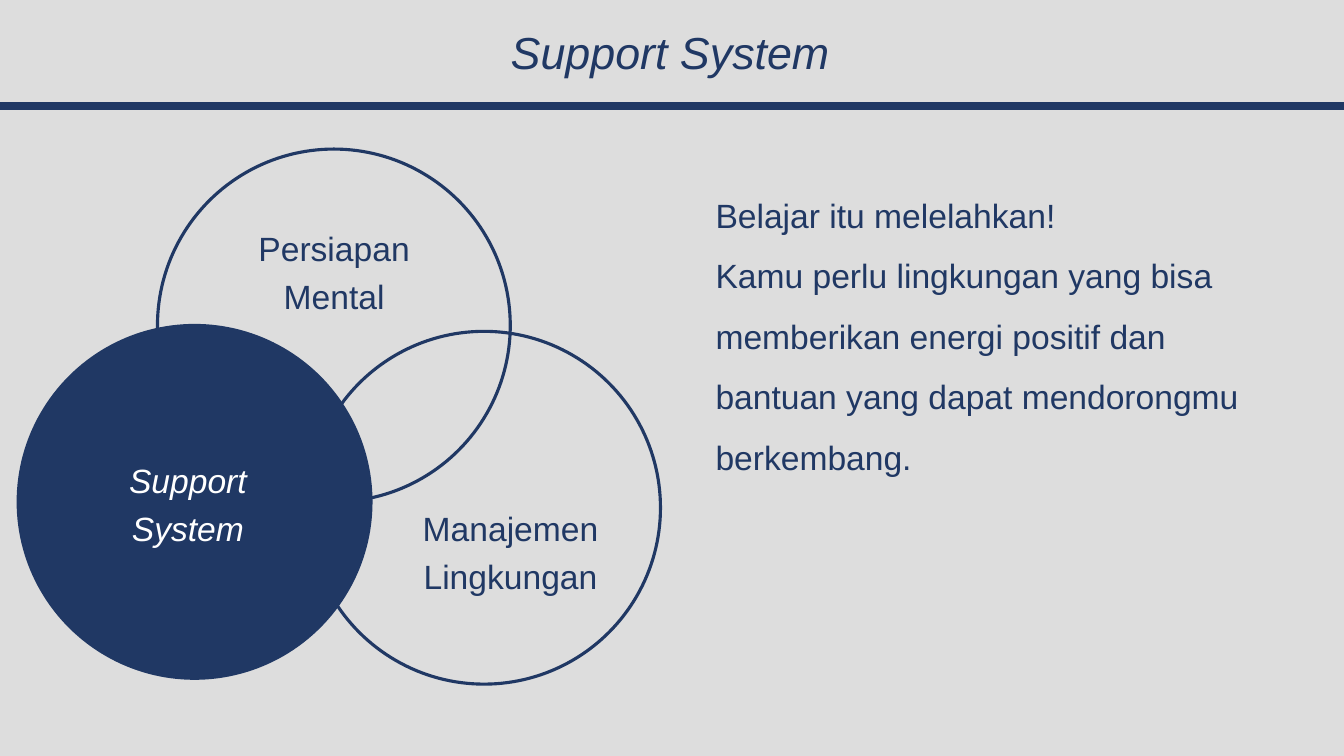
"""Build the Support System slide with three overlapping circles."""
from lxml import etree
from pptx import Presentation
from pptx import util as u
from pptx.dml.color import RGBColor
from pptx.enum import shapes, text
from pptx.oxml.ns import qn

NAVY = RGBColor(0x20, 0x38, 0x64)
WHITE = RGBColor(0xFF, 0xFF, 0xFF)
GREY = RGBColor(0xDD, 0xDD, 0xDD)


class Deck:
    font = "Arial"

    def __init__(self, wide, high):
        self.prs = Presentation()
        self.prs.slide_width, self.prs.slide_height = u.Pt(wide), u.Pt(high)
        self.slide = self.prs.slides.add_slide(self.prs.slide_layouts[1])
        fill = self.slide.background.fill
        fill.solid()
        fill.fore_color.rgb = GREY

    def rule(self, y, end, width):
        line = self.slide.shapes.add_connector(
            shapes.MSO_CONNECTOR.STRAIGHT, 0, u.Pt(y), u.Pt(end), u.Pt(y))
        line.line.color.rgb = NAVY
        line.line.width = u.Pt(width)
        etree.SubElement(line._element.spPr, qn("a:effectLst"))

    def ring(self, x, y, size, full=False):
        ring = self.slide.shapes.add_shape(
            shapes.MSO_SHAPE.OVAL, u.Pt(x), u.Pt(y), u.Pt(size), u.Pt(size))
        ring.shadow.inherit = False
        ring.line.color.rgb = NAVY
        ring.line.width = u.Pt(2.25)
        if full:
            ring.fill.solid()
            ring.fill.fore_color.rgb = NAVY
        else:
            ring.fill.background()

    def style(self, shape, box, words, size=24, color=NAVY, italic=False,
              align=text.PP_ALIGN.CENTER, space=1.2, anchor=text.MSO_ANCHOR.TOP):
        shape.left, shape.top, shape.width, shape.height = map(u.Pt, box)
        frame = shape.text_frame
        frame.text = words
        frame.word_wrap = True
        frame.auto_size = text.MSO_AUTO_SIZE.NONE
        frame.vertical_anchor = anchor
        for para in frame.paragraphs:
            para.alignment = align
            para.line_spacing = space
            para.space_before = u.Pt(0)
            for run in para.runs:
                run.font.name = self.font
                run.font.size = u.Pt(size)
                run.font.italic = italic
                run.font.color.rgb = color

    def title(self, box, words):
        self.style(self.slide.shapes.title, box, words, size=32, italic=True,
                   space=0.9, anchor=text.MSO_ANCHOR.MIDDLE)

    def body(self, box, words):
        shape = self.slide.placeholders[1]
        self.style(shape, box, words)
        for para in shape.text_frame.paragraphs:
            props = para._p.get_or_add_pPr()
            props.set("marL", "0")
            props.set("indent", "0")
            etree.SubElement(props, qn("a:buNone"))

    def label(self, box, words, **look):
        self.style(self.slide.shapes.add_textbox(0, 0, 0, 0), box, words, **look)


def main():
    deck = Deck(960, 540)
    deck.rule(75.6, 965, 6)
    deck.title((28.8, 14.4, 900, 50.4), "Support System")
    deck.body((167, 153.4, 143.3, 80), "Persiapan Mental")

    size = 252
    deck.ring(112.5, 106.5, size)
    deck.ring(13, 232.5, size, full=True)
    deck.ring(219.8, 236.7, size)

    deck.label((62.6, 319, 143.3, 80), "Support System", color=WHITE, italic=True)
    deck.label((293, 353.5, 143.3, 80), "Manajemen Lingkungan")
    deck.label((504, 121, 419, 232.6),
               "Belajar itu melelahkan!\n"
               "Kamu perlu lingkungan yang bisa memberikan energi positif dan "
               "bantuan yang dapat mendorongmu berkembang.",
               align=text.PP_ALIGN.LEFT, space=1.5)
    deck.prs.save("out.pptx")


if __name__ == "__main__":
    main()
